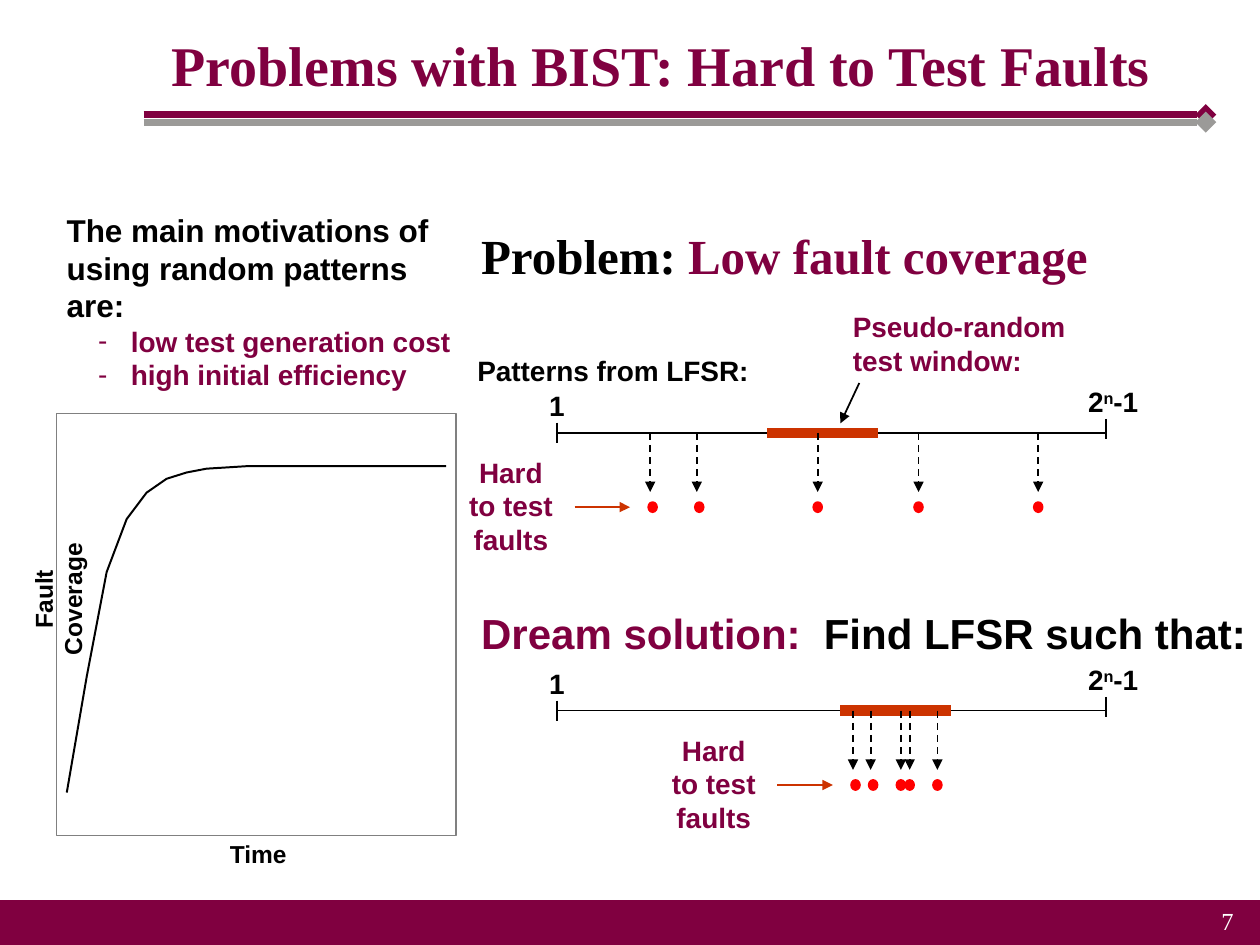
"""Build the slide on hard to test faults in BIST."""
from lxml.etree import SubElement
from pptx import Presentation
from pptx.dml.color import RGBColor
from pptx.enum.dml import MSO_LINE
from pptx.enum.shapes import MSO_CONNECTOR, MSO_SHAPE
from pptx.enum.text import MSO_ANCHOR, PP_ALIGN
from pptx.oxml.ns import qn
from pptx.util import Inches, Pt

WINE, BLACK, WHITE, GREY = "800040", "000000", "FFFFFF", "9B9A98"
RUST, RED, FRAME = "CC3300", "FF0000", "808080"
SERIF, SANS = "Times New Roman", "Arial"
LEFT, MID, RIGHT = PP_ALIGN.LEFT, PP_ALIGN.CENTER, PP_ALIGN.RIGHT
hue = RGBColor.from_string

deck = Presentation()
deck.slide_width, deck.slide_height = Inches(10), Inches(7.5)
col, row = deck.slide_width / 100, deck.slide_height / 75
slide = deck.slides.add_slide(deck.slide_layouts[5])
shapes = slide.shapes


def line(x1, y1, x2, y2, tone=BLACK, width=1, tip=None, dash=None):
    """Draw a straight line between two grid points."""
    link = shapes.add_connector(
        MSO_CONNECTOR.STRAIGHT,
        round(x1 * col), round(y1 * row), round(x2 * col), round(y2 * row))
    link.line.color.rgb = hue(tone)
    link.line.width = Pt(width)
    if dash:
        link.line.dash_style = dash
    if tip:
        SubElement(link.line._get_or_add_ln(), qn("a:tailEnd"), type=tip)
    SubElement(link._element.spPr, qn("a:effectLst"))


def write(x, y, w, h, parts, size=16, align=LEFT, face=SANS, bold=True, box=None):
    """Put coloured runs in a box on the grid."""
    box = box or shapes.add_textbox(0, 0, 0, 0)
    box.left, box.top = round(x * col), round(y * row)
    box.width, box.height = round(w * col), round(h * row)
    frame = box.text_frame
    frame.word_wrap = True
    para = frame.paragraphs[0]
    para.alignment = align
    for words, tone in parts:
        run = para.add_run()
        run.text = words
        run.font.size, run.font.name, run.font.bold = Pt(size), face, bold
        run.font.color.rgb = hue(tone)
    return box


line(11.4, 9.1, 95.7, 9.1, WINE, 4, "diamond")
line(11.4, 9.7, 95.7, 9.7, GREY, 4, "diamond")
band = shapes.add_shape(MSO_SHAPE.RECTANGLE, 0, round(71.5 * row),
                        deck.slide_width, round(3.6 * row))
band.shadow.inherit = False
band.fill.solid()
band.fill.fore_color.rgb = band.line.color.rgb = hue(WINE)
band.line.width = Pt(0.75)
write(86.2, 71.4, 12.7, 5.2, [("7", WHITE)], 14, RIGHT, SERIF, False)

title = write(7.5, 0, 90, 10.1, [("Problems with BIST: Hard to Test Faults", WINE)],
              32, MID, SERIF, box=shapes.title)
title.text_frame.vertical_anchor = MSO_ANCHOR.MIDDLE

write(37.2, 17.4, 53.8, 5.1,
      [("Problem: ", BLACK), ("Low fault coverage", WINE)], 28, face=SERIF)

goals = write(4.3, 16.2, 33.1, 15.4,
              [("The main motivations of using random patterns are:", BLACK)], 18)
goals.text_frame.vertical_anchor = MSO_ANCHOR.MIDDLE
for words in "low test generation cost", "high initial efficiency":
    para = goals.text_frame.add_paragraph()
    para.text = words
    props = para._p.get_or_add_pPr()
    props.set("marL", str(round(5.1 * col)))
    props.set("indent", str(round(-2.6 * col)))
    SubElement(props, qn("a:buFont"), typeface=SANS)
    SubElement(props, qn("a:buChar"), char="-")
    font = para.runs[0].font
    font.size, font.name, font.bold = Pt(16), SANS, True
    font.color.rgb = hue(WINE)

write(36.9, 27.6, 25.7, 3.7, [("Patterns from LFSR:", BLACK)])
write(66.7, 24.1, 21.1, 6.4, [("Pseudo-random test window:", WINE)])

dream = write(37.2, 47.7, 62.8, 5,
              [("Dream solution:", WINE), ("\tFind LFSR such that:", BLACK)], 24)
dream.text_frame.word_wrap = False
tabs = SubElement(dream.text_frame.paragraphs[0]._p.get_or_add_pPr(), qn("a:tabLst"))
SubElement(tabs, qn("a:tab"), pos=str(round(27.2 * col)), algn="l")

tracks = [(34.35, 60.9, 36.2, (51.6, 55.3, 64.9, 72.9, 82.4)),
          (56.4, 66.7, 52.3, (67.7, 69.1, 71.5, 72.2, 74.4))]
for y, start, note, drops in tracks:
    line(44.2, y, 87.8, y)
    line(44.2, y - 0.8, 44.2, y + 0.8)
    line(87.8, y - 1.1, 87.8, y + 0.5)
    write(42, y - 4, 4.4, 3.7, [("1", BLACK)], align=MID)
    power = write(85.1, y - 4.3, 6.5, 3.7,
                  [("2", BLACK), ("n", BLACK), ("-1", BLACK)], align=MID)
    power.text_frame.paragraphs[0].runs[1]._r.get_or_add_rPr().set("baseline", "30000")
    line(start, y, start + 8.75, y, RUST, 6)
    for rank, x in enumerate(drops):
        line(x, y, x, y + 4.7, tip="triangle", dash=MSO_LINE.DASH)
        nudge = 0.2 if rank < 2 else 0
        dot = shapes.add_shape(
            MSO_SHAPE.OVAL, round((x + nudge - 0.35) * col),
            round((y + 5.5) * row), round(0.7 * col), round(0.8 * row))
        dot.shadow.inherit = False
        dot.fill.solid()
        dot.fill.fore_color.rgb = dot.line.color.rgb = hue(RED)
        dot.line.width = Pt(1)
    write(note, y + 1.3, 8.7, 9, [("Hard to test faults", WINE)], align=MID)
    line(note + 9.4, y + 5.9, note + 13.8, y + 5.9, RUST, tip="triangle")
line(68.2, 30.4, 66.7, 33.6, tip="triangle")

plot = shapes.add_shape(MSO_SHAPE.RECTANGLE, round(4.5 * col), round(32.8 * row),
                        round(31.7 * col), round(33.5 * row))
plot.shadow.inherit = False
plot.fill.background()
plot.line.color.rgb = hue(FRAME)
plot.line.width = Pt(0.63)

rise = [62.9, 53.7, 45.4, 41.2, 39.1, 38, 37.5, 37.2, 37.1] + [37] * 11
step = 30.1 / (len(rise) - 1)
spots = [((5.3 + i * step) * col, y * row) for i, y in enumerate(rise)]
pen = shapes.build_freeform(*map(round, spots[0]))
pen.add_line_segments([(round(x), round(y)) for x, y in spots[1:]], close=False)
curve = pen.convert_to_shape()
curve.shadow.inherit = False
curve.fill.background()
curve.line.color.rgb = hue(BLACK)
curve.line.width = Pt(1.13)

time = write(17.5, 66.6, 6, 2.3, [("Time", BLACK)], 14, MID)
fault = write(-3.4, 46.4, 13.6, 2.3, [("Fault Coverage", BLACK)], 14, MID)
fault.rotation = 270
for box in time, fault:
    frame = box.text_frame
    frame.margin_left = frame.margin_right = frame.margin_top = frame.margin_bottom = 0

deck.save("out.pptx")
